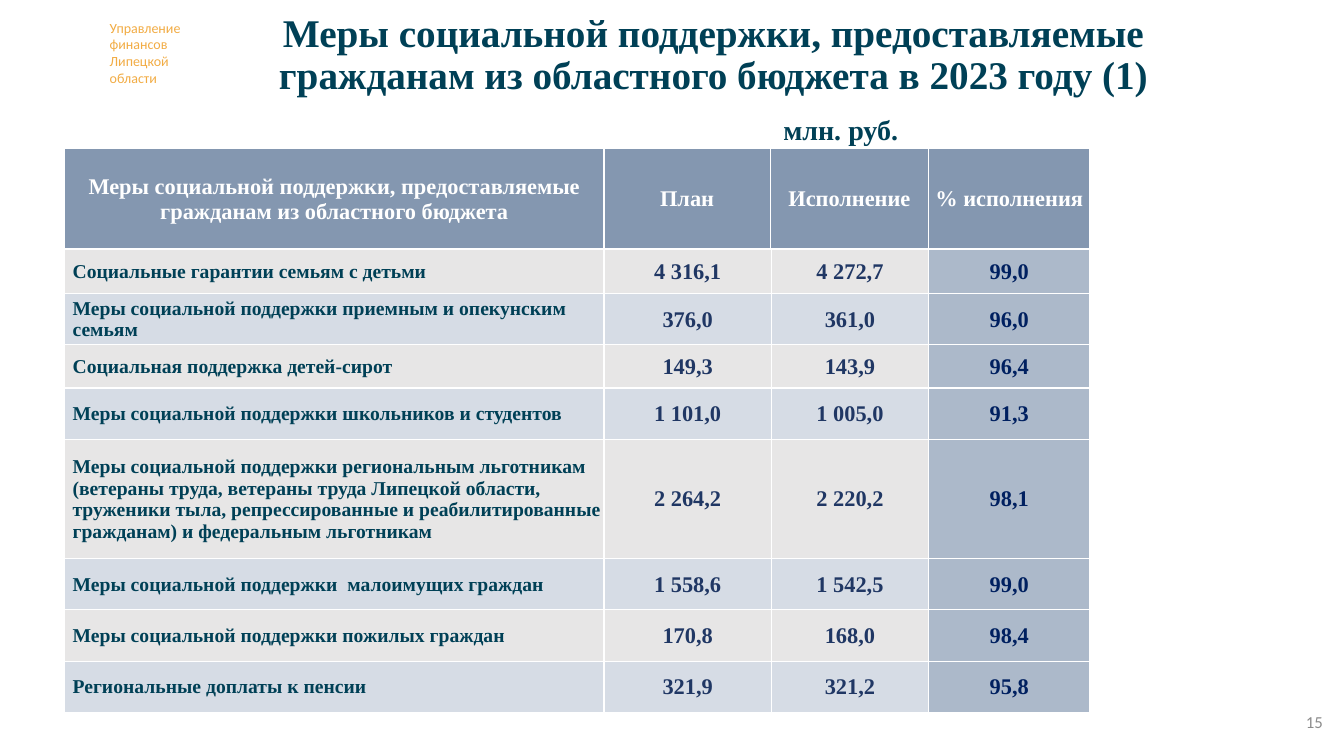
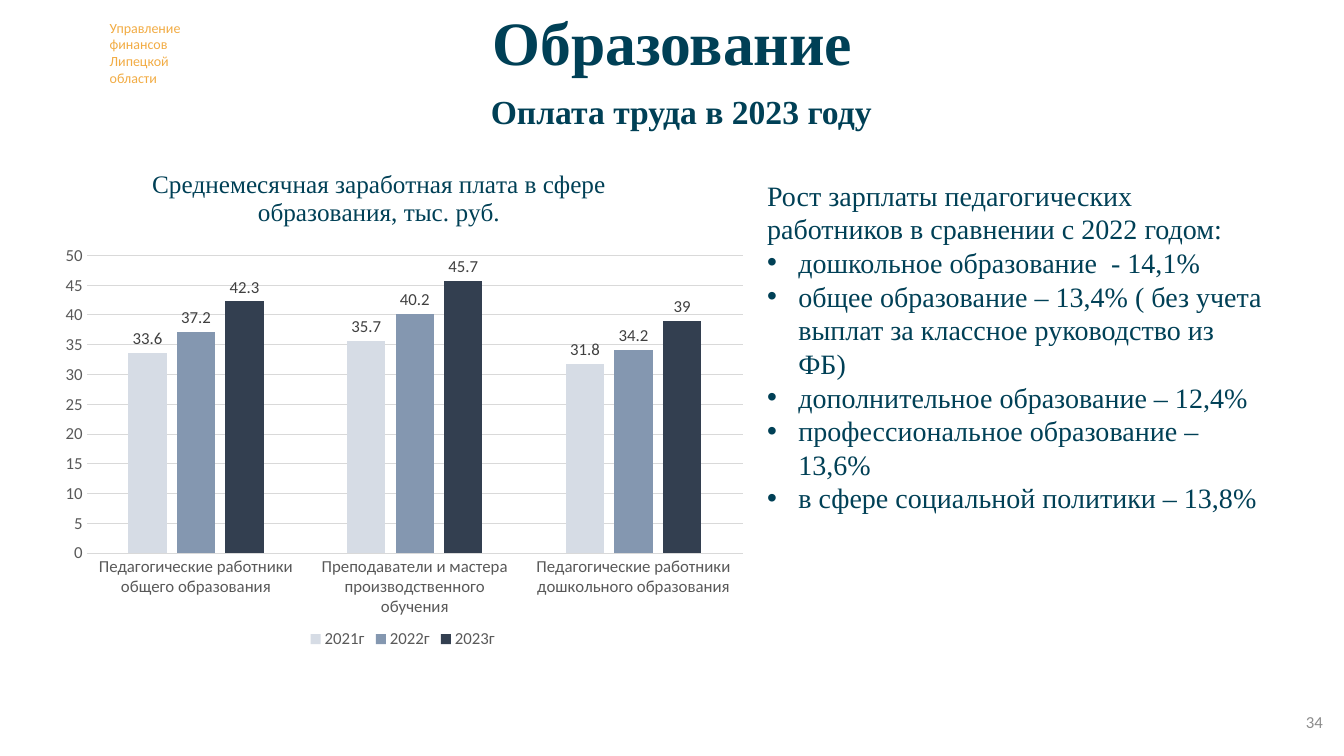
from dataclasses import dataclass

from pptx import Presentation
from pptx import util as u
from pptx.chart.data import CategoryChartData
from pptx.dml.color import RGBColor
from pptx.enum import chart as c
from pptx.enum import text as t
from pptx.oxml import parse_xml
from pptx.oxml.ns import nsdecls, qn


@dataclass(frozen=True)
class Theme:
    serif: str = "Times New Roman"
    sans: str = "Calibri"
    teal: str = "004056"
    navy: str = "203764"
    deep_blue: str = "002060"
    amber: str = "F2AC44"
    white: str = "FFFFFF"
    header: str = "8497B0"
    bands: tuple = ("E7E6E6", "D6DCE5")
    percent: str = "ACB9CA"
    series: tuple = ("D6DCE5", "8497B0", "333F50")
    grid: str = "D9D9D9"
    axis_text: str = "595959"
    label_text: str = "404040"
    page_text: str = "8C8C8C"
    tiny: int = 10
    small: int = 12
    row: int = 14
    number: int = 16
    chart_title: int = 18
    body: int = 20
    subtitle: int = 24
    title: int = 28
    big_title: int = 44


theme = Theme()
rgb = RGBColor.from_string


def write(frame, lines, size, color, font=theme.serif, bold=False, align=t.PP_ALIGN.LEFT):
    """Fill a text frame, one paragraph per line, all in one style."""
    frame.word_wrap = True
    frame.text = "\n".join(lines)
    for paragraph in frame.paragraphs:
        paragraph.alignment = align
        for run in paragraph.runs:
            run.font.name = font
            run.font.size = u.Pt(size)
            run.font.bold = bold
            run.font.color.rgb = rgb(color)


def place_in_chart(element, index, modes, fractions):
    """Give a chart part a manual layout in fractions of the chart's size."""
    for layout in element.findall(qn("c:layout")):
        element.remove(layout)
    values = "".join(f'<c:{name} val="{value}"/>' for name, value in fractions.items())
    element.insert(index, parse_xml(
        f'<c:layout {nsdecls("c")}><c:manualLayout>{modes}'
        f'<c:xMode val="edge"/><c:yMode val="edge"/>{values}</c:manualLayout></c:layout>'))


presentation = Presentation()
presentation.slide_width = u.Inches(13.33)
presentation.slide_height = u.Inches(7.5)
title_only = presentation.slide_layouts[5]

# Titles and page numbers
pages = [
    ("Меры социальной поддержки, предоставляемые гражданам из областного бюджета в 2023 году (1)",
     theme.title, (1.99, 0.08, 10.17, 0.95), "15"),
    ("Образование", theme.big_title, (2.09, 0.14, 9.16, 0.63), "34"),
]
for title_text, size, box, number in pages:
    slide = presentation.slides.add_slide(title_only)
    title = slide.shapes.title
    title.left, title.top, title.width, title.height = map(u.Inches, box)
    title.text_frame.auto_size = t.MSO_AUTO_SIZE.NONE
    title.text_frame.vertical_anchor = t.MSO_ANCHOR.MIDDLE
    write(title.text_frame, [title_text], size, theme.teal, bold=True, align=t.PP_ALIGN.CENTER)
    title.text_frame.paragraphs[0].line_spacing = 0.9

    page_number = slide.shapes.add_textbox(*map(u.Inches, (10.11, 6.96, 3.11, 0.4)))
    page_number.text_frame.vertical_anchor = t.MSO_ANCHOR.MIDDLE
    write(page_number.text_frame, [number], theme.small, theme.page_text, theme.sans,
          align=t.PP_ALIGN.RIGHT)

support_slide, education_slide = presentation.slides

# The department name belongs to the layout, so every slide shows it
department = support_slide.shapes.add_textbox(*map(u.Inches, (0.99, 0.14, 0.97, 0.77)))
write(department.text_frame, ["Управление финансов Липецкой области"], theme.tiny, theme.amber,
      theme.sans)
title_only.shapes.element.append(department.element)

# Social support: header table above the table of measures
unit = support_slide.shapes.add_textbox(*map(u.Inches, (7.67, 1.07, 1.58, 0.44)))
write(unit.text_frame, ["млн. руб."], theme.body, theme.teal, bold=True)

header = [("Меры социальной поддержки, предоставляемые гражданам из областного бюджета",
           "План", "Исполнение", "% исполнения")]
measures = [
    ("Социальные гарантии семьям с детьми", "4 316,1", "4 272,7", "99,0"),
    ("Меры социальной поддержки приемным и опекунским семьям", "376,0", "361,0", "96,0"),
    ("Социальная поддержка детей-сирот", "149,3", "143,9", "96,4"),
    ("Меры социальной поддержки школьников и студентов", "1 101,0", "1 005,0", "91,3"),
    ("Меры социальной поддержки региональным льготникам (ветераны труда, ветераны труда "
     "Липецкой области, труженики тыла, репрессированные и реабилитированные гражданам) "
     "и федеральным льготникам", "2 264,2", "2 220,2", "98,1"),
    ("Меры социальной поддержки  малоимущих граждан", "1 558,6", "1 542,5", "99,0"),
    ("Меры социальной поддержки пожилых граждан", "170,8", "168,0", "98,4"),
    ("Региональные доплаты к пенсии", "321,9", "321,2", "95,8"),
]
tables = [
    (header, 1.47, (5.35, 1.65, 1.57, 1.6), (1,)),
    (measures, 2.47, (5.35, 1.66, 1.56, 1.6), (0.44, 0.51, 0.43, 0.51, 1.18, 0.51, 0.51, 0.51)),
]
for rows, top, widths, heights in tables:
    table = support_slide.shapes.add_table(
        len(rows), len(widths), u.Inches(0.64), u.Inches(top),
        u.Inches(sum(widths)), u.Inches(sum(heights))).table
    table.first_row = table.horz_banding = False
    for column, width in zip(table.columns, widths):
        column.width = u.Inches(width)
    for row_index, (row, height) in enumerate(zip(rows, heights)):
        table.rows[row_index].height = u.Inches(height)
        for column_index, value in enumerate(row):
            cell = table.cell(row_index, column_index)
            is_name = rows is measures and column_index == 0
            if rows is header:
                fill, color = theme.header, theme.white
            elif column_index == 3:
                fill, color = theme.percent, theme.deep_blue
            else:
                fill = theme.bands[row_index % 2]
                color = theme.teal if is_name else theme.navy
            cell.margin_left = u.Inches(0.08 if is_name else 0.01)
            cell.margin_right = cell.margin_top = u.Inches(0.01)
            cell.margin_bottom = 0
            cell.vertical_anchor = t.MSO_ANCHOR.MIDDLE
            write(cell.text_frame, [value], theme.row if is_name else theme.number, color,
                  bold=True, align=t.PP_ALIGN.LEFT if is_name else t.PP_ALIGN.CENTER)
            properties = cell._tc.get_or_add_tcPr()
            for side in ("lnL", "lnR", "lnT", "lnB"):
                properties.append(parse_xml(
                    f'<a:{side} {nsdecls("a")} w="{u.Pt(1)}"><a:solidFill>'
                    f'<a:srgbClr val="{theme.white}"/></a:solidFill></a:{side}>'))
            cell.fill.solid()
            cell.fill.fore_color.rgb = rgb(fill)

# Education: subtitle, pay chart and growth list
subtitle = education_slide.shapes.add_textbox(*map(u.Inches, (4.77, 0.85, 4.79, 0.5)))
write(subtitle.text_frame, ["Оплата труда в 2023 году"], theme.subtitle, theme.teal, bold=True)

pay = CategoryChartData()
pay.categories = ["Педагогические работники общего образования",
                  "Преподаватели и мастера производственного обучения",
                  "Педагогические работники дошкольного образования"]
pay.add_series("2021г", (33.6, 35.7, 31.8))
pay.add_series("2022г", (37.2, 40.2, 34.2))
pay.add_series("2023г", (42.3, 45.7, 39))
chart = education_slide.shapes.add_chart(
    c.XL_CHART_TYPE.COLUMN_CLUSTERED, *map(u.Inches, (0.48, 1.09, 7.03, 5.39)), pay).chart
chart.font.name = theme.sans
chart.font.size = u.Pt(theme.small)
chart.font.color.rgb = rgb(theme.axis_text)

write(chart.chart_title.text_frame, ["Среднемесячная заработная плата в сфере образования, тыс. руб."],
      theme.chart_title, theme.teal, align=t.PP_ALIGN.CENTER)
place_in_chart(chart.element.xpath(".//c:chart/c:title")[0], 1, "", {"x": 0.14, "y": 0.1})
place_in_chart(chart.element.xpath(".//c:plotArea")[0], 0, '<c:layoutTarget val="inner"/>',
               {"x": 0.054, "y": 0.268, "w": 0.926, "h": 0.548})

chart.has_legend = True
chart.legend.position = c.XL_LEGEND_POSITION.BOTTOM
chart.legend.include_in_layout = False

for axis in (chart.category_axis, chart.value_axis):
    axis.major_tick_mark = axis.minor_tick_mark = c.XL_TICK_MARK.NONE
chart.value_axis.minimum_scale = 0
chart.value_axis.maximum_scale = 50
chart.value_axis.major_unit = 5
chart.value_axis.format.line.fill.background()
for line in (chart.category_axis.format.line, chart.value_axis.major_gridlines.format.line):
    line.color.rgb = rgb(theme.grid)
    line.width = u.Pt(0.75)

plot = chart.plots[0]
plot.gap_width = 219
plot.overlap = -27
plot.vary_by_categories = False
for series, color in zip(plot.series, theme.series):
    series.format.fill.solid()
    series.format.fill.fore_color.rgb = rgb(color)
    labels = series.data_labels
    labels.show_value = True
    labels.position = c.XL_LABEL_POSITION.OUTSIDE_END
    labels.font.name = theme.sans
    labels.font.size = u.Pt(theme.small)
    labels.font.color.rgb = rgb(theme.label_text)

growth = education_slide.shapes.add_textbox(*map(u.Inches, (7.51, 1.72, 5.17, 4.07)))
write(growth.text_frame, [
    "Рост зарплаты педагогических работников в сравнении с 2022 годом:",
    "дошкольное образование  - 14,1%",
    "общее образование – 13,4% ( без учета выплат за классное руководство из ФБ)",
    "дополнительное образование – 12,4%",
    "профессиональное образование – 13,6%",
    "в сфере социальной политики – 13,8%",
], theme.body, theme.teal)
for paragraph in growth.text_frame.paragraphs[1:]:
    properties = paragraph._p.get_or_add_pPr()
    properties.set("marL", str(u.Inches(0.31)))
    properties.set("indent", str(-u.Inches(0.31)))
    properties.append(parse_xml(f'<a:buFont {nsdecls("a")} typeface="Arial"/>'))
    properties.append(parse_xml(f'<a:buChar {nsdecls("a")} char="•"/>'))

presentation.save("out.pptx")
